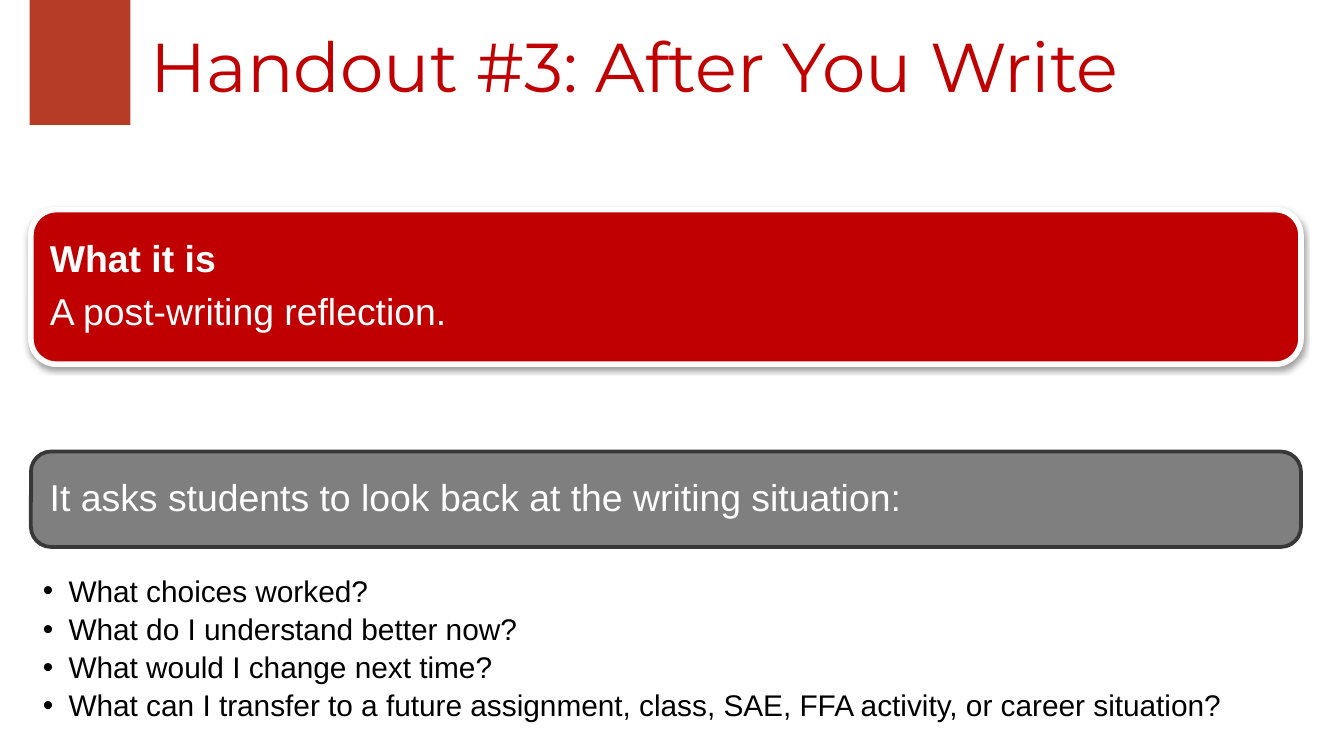
from lxml import etree
from pptx import Presentation
from pptx.dml.color import RGBColor
from pptx.enum.shapes import MSO_SHAPE
from pptx.enum.text import MSO_ANCHOR, PP_ALIGN
from pptx.oxml.ns import qn
from pptx.util import Inches, Pt

RECTANGLE = MSO_SHAPE.RECTANGLE
ROUNDED = MSO_SHAPE.ROUNDED_RECTANGLE
MIDDLE, TOP = MSO_ANCHOR.MIDDLE, MSO_ANCHOR.TOP
LEFT = PP_ALIGN.LEFT

RUST = RGBColor(0xB7, 0x3C, 0x26)
RED = RGBColor(0xC0, 0x00, 0x00)
GRAY = RGBColor(0x7F, 0x7F, 0x7F)
CHARCOAL = RGBColor(0x38, 0x38, 0x38)
WHITE = RGBColor(0xFF, 0xFF, 0xFF)
BLACK = RGBColor(0x00, 0x00, 0x00)

QUESTIONS = [
    "What choices worked?",
    "What do I understand better now?",
    "What would I change next time?",
    "What can I transfer to a future assignment, class, SAE, FFA activity, or career situation?",
]


def add_block(slide, kind, left, top, width, height, fill):
    block = slide.shapes.add_shape(
        kind, Inches(left), Inches(top), Inches(width), Inches(height))
    block.shadow.inherit = False
    block.fill.solid()
    block.fill.fore_color.rgb = fill
    block.line.fill.background()
    return block


def add_drop_shadow(block):
    effects = block._element.spPr.find(qn("a:effectLst"))
    shadow = etree.SubElement(
        effects, qn("a:outerShdw"), blurRad=str(Pt(3.1)), dist=str(Pt(1.6)),
        dir="5400000", rotWithShape="0")
    color = etree.SubElement(shadow, qn("a:srgbClr"), val="000000")
    etree.SubElement(color, qn("a:alpha"), val="38000")


def add_bullet(paragraph):
    properties = paragraph._p.get_or_add_pPr()
    properties.set("marL", str(Inches(0.19)))
    properties.set("indent", str(-Inches(0.19)))
    color = etree.SubElement(properties, qn("a:buClr"))
    etree.SubElement(color, qn("a:srgbClr"), val=str(BLACK))
    etree.SubElement(properties, qn("a:buFont"), typeface="Arial")
    etree.SubElement(properties, qn("a:buChar"), char="•")


def write(frame, lines, font, size, color, insets, anchor=MIDDLE, gap=0, bulleted=False):
    frame.word_wrap = True
    frame.vertical_anchor = anchor
    (frame.margin_left, frame.margin_top,
     frame.margin_right, frame.margin_bottom) = map(Inches, insets)
    frame.text = "\n".join(lines)
    for paragraph in frame.paragraphs:
        paragraph.alignment = LEFT
        paragraph.line_spacing = 0.9
        paragraph.space_after = Pt(gap * size)
        if bulleted:
            add_bullet(paragraph)
        for run in paragraph.runs:
            run.font.name = font
            run.font.size = Pt(size)
            run.font.color.rgb = color


def add_text(slide, top, height, lines, **style):
    box = slide.shapes.add_textbox(0, Inches(top), Inches(10), Inches(height))
    write(box.text_frame, lines, **style)


def add_panel(slide, top, height, radius, lines, fill, border, border_width):
    panel = add_block(slide, ROUNDED, 0.23, top, 9.45, height, fill)
    panel.adjustments[0] = radius / height
    panel.line.color.rgb = border
    panel.line.width = Pt(border_width)
    inset = 0.14 - 0.29 * radius
    write(panel.text_frame, lines, "Arial", 20, WHITE, [inset] * 4, gap=0.35)
    return panel


def main():
    deck = Presentation()
    deck.slide_width = Inches(10)
    deck.slide_height = deck.slide_width * 9 // 16
    slide = deck.slides.add_slide(deck.slide_layouts[6])

    add_block(slide, RECTANGLE, 0.22, -0.01, 0.75, 0.94, RUST)
    add_text(slide, 0, 1.12, ["Handout #3: After You Write"], font="Montserrat",
             size=37, color=RED, insets=(1.12, 0.07, 0.68, 0.15))

    definition = add_panel(slide, 1.56, 1.15, 0.19,
                           ["What it is", "A post-writing reflection."], RED, WHITE, 3)
    definition.text_frame.paragraphs[0].runs[0].font.bold = True
    add_drop_shadow(definition)

    add_panel(slide, 3.36, 0.71, 0.15,
              ["It asks students to look back at the writing situation:"], GRAY, CHARCOAL, 2)
    add_text(slide, 4.26, 1.13, QUESTIONS, font="Arial", size=16, color=BLACK,
             insets=(0.32, 0.03, 0.16, 0.03), anchor=TOP, gap=0.2, bulleted=True)

    deck.save("out.pptx")


if __name__ == "__main__":
    main()
